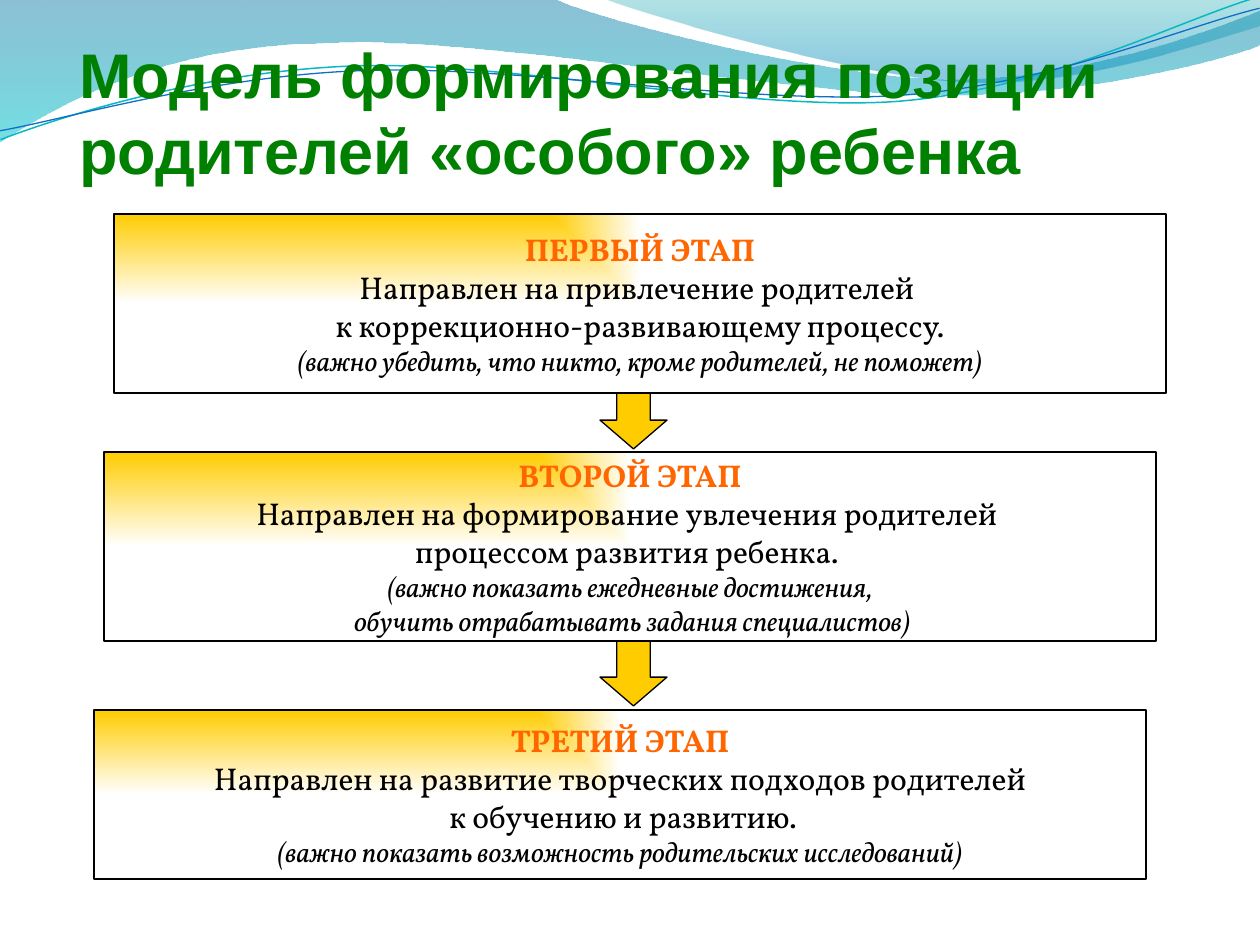
from lxml.etree import SubElement as Sub
from pptx import Presentation
from pptx.dml.color import RGBColor as RGB
from pptx.enum.shapes import MSO_SHAPE as Kind
from pptx.enum.text import MSO_ANCHOR as Anchor, PP_ALIGN as Align
from pptx.oxml.ns import qn
from pptx.util import Pt

PX = 914400 / 126
HUES = {"title": "008000", "stage": "FF6600", "gold": "FFCC00", "text": "000000",
        "white": "FFFFFF", "deep": "0074A1", "aqua": "00C6CF", "teal": "00A1A9",
        "sky": "008BBF", "wave1": "0AB8BF", "wave2": "0F6FC6"}


def trace(start, steps, close):
    """Draw a freeform; a step of 2 numbers is a line, one of 6 a Bezier curve."""
    spots = [step[i:i + 2] for step in steps for i in range(0, len(step), 2)]
    pen = shapes.build_freeform(*(n * PX for n in start))
    pen.add_line_segments([(x * PX, y * PX) for x, y in spots], close=close)
    form = pen.convert_to_shape()
    form.shadow.inherit = False
    legs = iter(list(form.element.iter(qn("a:lnTo"))))
    for step in steps:
        leg = next(legs)
        if len(step) == 6:
            curve = Sub(leg.getparent(), qn("a:cubicBezTo"))
            leg.getparent().replace(leg, curve)
            curve.append(leg[0])
            for _ in range(2):
                leg = next(legs)
                curve.append(leg[0])
                leg.getparent().remove(leg)
    return form


def blend(shape, stops, corner=False):
    """Fill with (place, hue, opacity) stops, downwards or from the top left corner."""
    shape.fill.background()
    props = shape.element.spPr
    old = props.find(qn("a:noFill"))
    fill = Sub(props, qn("a:gradFill"), rotWithShape="1")
    props.replace(old, fill)
    row = Sub(fill, qn("a:gsLst"))
    for place, hue, solid in stops:
        stop = Sub(row, qn("a:gs"), pos=str(place * 1000))
        tint = Sub(stop, qn("a:srgbClr"), val=HUES[hue])
        if solid < 100:
            Sub(tint, qn("a:alpha"), val=str(solid * 1000))
    if corner:
        way = Sub(fill, qn("a:path"), {"path": "rect"})
        Sub(way, qn("a:fillToRect"), r="100000", b="100000")
    else:
        Sub(fill, qn("a:lin"), ang="5400000", scaled="1")


deck = Presentation()
deck.slide_width, deck.slide_height = round(1260 * PX), round(945 * PX)
slide = deck.slides.add_slide(deck.slide_layouts[5])
shapes = slide.shapes

# Bands and thin waves along the top
bands = [
    ((0, 0), [(554, -1), (600, 21, 837, 79, 955, 79), (1074, 79, 1207, 33, 1260, 11),
              (1261, 45), (1239, 55, 1096, 96, 940, 95), (784, 95, 481, 35, 324, 43),
              (163, 45, 58, 105, -1, 142), (0, 0)],
     [(0, "deep", 45), (100, "aqua", 55)]),
    ((604, -1), [(641, 14, 859, 78, 969, 82), (1079, 87, 1211, 40, 1260, 26),
                 (1260, 0), (604, -1)],
     [(0, "teal", 30), (80, "sky", 45)]),
]
for start, steps, stops in bands:
    band = trace(start, steps, True)
    blend(band, stops)
    band.line.fill.background()

waves = [
    ((-2, 110), [(59, 90, 200, 52, 350, 53), (499, 53, 745, 118, 896, 114),
                 (1049, 109, 1184, 45, 1260, 27)], "wave1", 0.85),
    ((-2, 101), [(57, 94, 207, 57, 357, 58), (509, 58, 750, 112, 902, 108),
                 (1052, 104, 1188, 52, 1262, 38)], "wave2", 0.75),
]
for start, steps, hue, width in waves:
    wave = trace(start, steps, False)
    wave.rotation = -2.7
    wave.fill.background()
    wave.line.color.rgb = RGB.from_string(HUES[hue])
    wave.line.width = Pt(width)

# Arrows between the stages, partly behind the boxes
for top in (591, 334):
    arrow = shapes.add_shape(Kind.DOWN_ARROW, *(round(n * PX) for n in (600, top, 67, 115)))
    arrow.adjustments[1] = 0.43
    arrow.shadow.inherit = False
    arrow.fill.solid()
    arrow.fill.fore_color.rgb = RGB.from_string(HUES["gold"])
    arrow.line.color.rgb = RGB.from_string(HUES["text"])
    arrow.line.width = Pt(0.75)

title = shapes.title
shapes.element.append(title.element)
place = {"left": 79, "top": 29, "width": 1134, "height": 158}
for name, size in place.items():
    setattr(title, name, round(size * PX))
frame = title.text_frame
frame.text = "Модель формирования позиции родителей «особого» ребенка"
look = {"margin_left": 0, "margin_right": 0, "margin_top": Pt(3.6), "margin_bottom": 0,
        "vertical_anchor": Anchor.BOTTOM, "word_wrap": True}
for name, value in look.items():
    setattr(frame, name, value)
para = frame.paragraphs[0]
para.alignment = Align.LEFT
for name, value in {"name": "Arial", "size": Pt(36), "bold": True}.items():
    setattr(para.runs[0].font, name, value)
para.runs[0].font.color.rgb = RGB.from_string(HUES["title"])

# Stage boxes
styles = {
    "head": ("stage", {"name": "Vollkorn", "size": Pt(18), "bold": True}),
    "goal": ("text", {"name": "Vollkorn", "size": Pt(18), "bold": False}),
    "note": ("text", {"name": "Vollkorn", "size": Pt(16), "italic": True}),
}
stages = [
    (114, 214, 179, [
        ("head", "ПЕРВЫЙ ЭТАП"),
        ("goal", "Направлен на привлечение родителей "),
        ("goal", "к коррекционно-развивающему процессу."),
        ("note", "(важно убедить, что никто, кроме родителей, не поможет)")]),
    (104, 452, 189, [
        ("head", "ВТОРОЙ ЭТАП"),
        ("goal", "Направлен на формирование увлечения родителей "),
        ("goal", "процессом развития ребенка. "),
        ("note", "(важно показать ежедневные достижения,"),
        ("note", " обучить отрабатывать задания специалистов)")]),
    (94, 710, 169, [
        ("head", "ТРЕТИЙ ЭТАП"),
        ("goal", "Направлен на развитие творческих подходов родителей"),
        ("goal", " к обучению и развитию."),
        ("note", "(важно показать возможность родительских исследований)")]),
]
for left, top, height, lines in stages:
    box = shapes.add_shape(Kind.RECTANGLE, *(round(n * PX) for n in (left, top, 1052, height)))
    box.shadow.inherit = False
    blend(box, [(0, "gold", 100), (100, "white", 100)], corner=True)
    box.line.color.rgb = RGB.from_string(HUES["text"])
    box.line.width = Pt(0.75)
    frame = box.text_frame
    frame.word_wrap = False
    frame.vertical_anchor = Anchor.MIDDLE
    for i, (style, words) in enumerate(lines):
        para = frame.add_paragraph() if i else frame.paragraphs[0]
        para.alignment = Align.CENTER
        run = para.add_run()
        run.text = words
        hue, form = styles[style]
        for name, value in form.items():
            setattr(run.font, name, value)
        run.font.color.rgb = RGB.from_string(HUES[hue])

deck.save("out.pptx")
